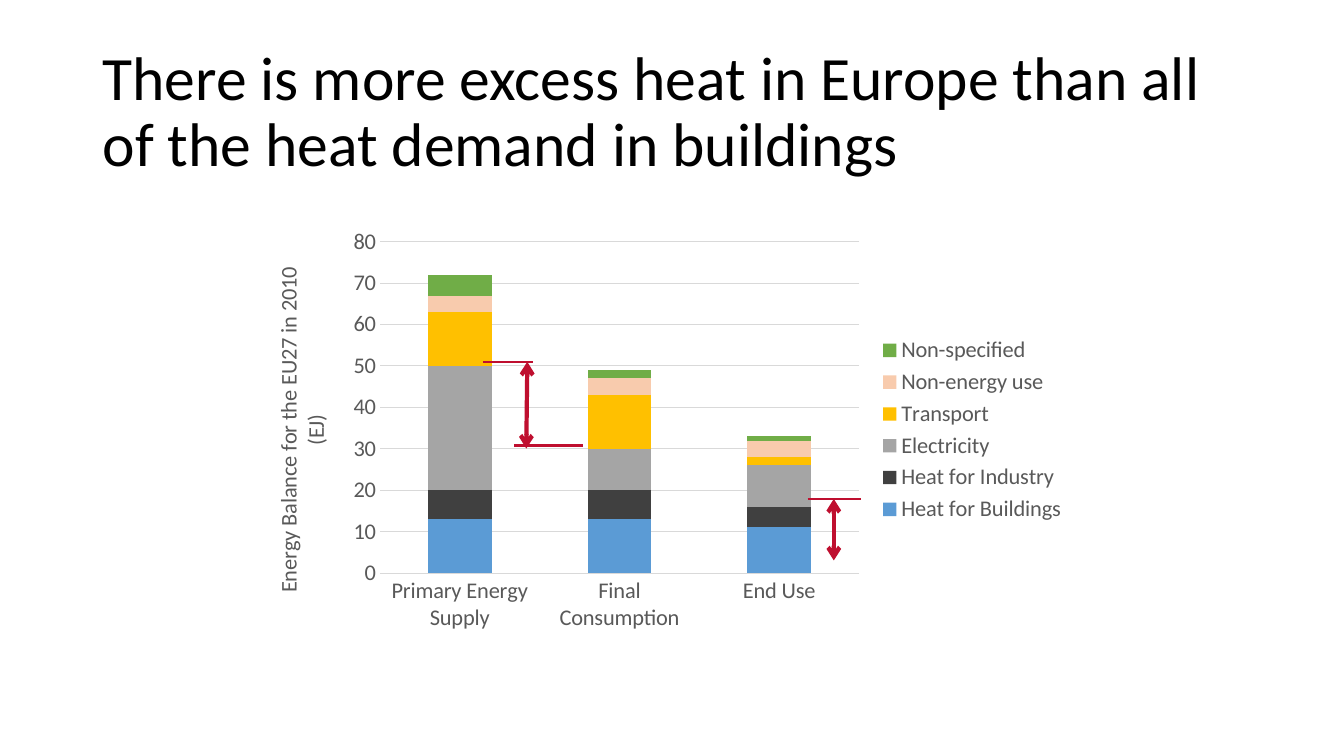
from pptx import Presentation
from pptx.chart.data import CategoryChartData as Data
from pptx.dml.color import RGBColor
from pptx.enum.chart import XL_CHART_TYPE as Kind, XL_LEGEND_POSITION as Place, XL_TICK_MARK as Tick
from pptx.enum.shapes import MSO_CONNECTOR as Link
from pptx.enum.text import MSO_ANCHOR as Anchor
from pptx.oxml.ns import qn
from pptx.util import Inches, Pt
from lxml.etree import SubElement as add_node

FONT = "Calibri"
GREY, RULE, RED = "595959", "D9D9D9", "BF0F2F"

STAGES = ["Primary Energy Supply", "Final Consumption", "End Use"]
USES = [
    ("Heat for Buildings", (13, 13, 11), "5B9BD5"),
    ("Heat for Industry", (7, 7, 5), "404040"),
    ("Electricity", (30, 10, 10), "A5A5A5"),
    ("Transport", (13, 13, 2), "FFC000"),
    ("Non-energy use", (4, 4, 4), "F8CBAD"),
    ("Non-specified", (5, 2, 1), "70AD47"),
]

# Start, end, width, arrowheads
MARKS = [
    ((5.23, 3.59), (5.22, 4.45), 3, True),
    ((4.79, 3.59), (5.29, 3.59), 1.5, False),
    ((5.1, 4.42), (5.78, 4.42), 2.25, False),
    ((8.27, 4.95), (8.27, 5.56), 3, True),
    ((8.01, 4.95), (8.54, 4.95), 1.5, False),
]


def color(code):
    return RGBColor.from_string(code)


def style(font, size=16, tint=GREY):
    font.name = FONT
    font.size = Pt(size)
    font.bold = False
    font.color.rgb = color(tint)


def stroke(line, tint, width):
    line.color.rgb = color(tint)
    line.width = Pt(width)


def add_text(slide, text, box, size=16, tint="000000", space=1.0):
    frame = slide.shapes.add_textbox(*map(Inches, box)).text_frame
    frame.word_wrap = True
    frame.vertical_anchor = Anchor.MIDDLE
    para = frame.paragraphs[0]
    para.line_spacing = space
    run = para.add_run()
    run.text = text
    style(run.font, size, tint)


def add_bars(slide, box):
    data = Data(number_format="0")
    data.categories = STAGES
    for name, vals, _ in USES:
        data.add_series(name, vals)
    chart = slide.shapes.add_chart(Kind.COLUMN_STACKED, *map(Inches, box), data).chart
    style(chart.font)
    chart.has_title = False

    # Stacked columns
    plot = chart.plots[0]
    plot.gap_width, plot.overlap = 150, 100
    plot.vary_by_categories = False
    for series, (_, _, tint) in zip(plot.series, USES):
        series.format.fill.solid()
        series.format.fill.fore_color.rgb = color(tint)

    # Axes
    cat, val = chart.category_axis, chart.value_axis
    for axis in (cat, val):
        axis.major_tick_mark = axis.minor_tick_mark = Tick.NONE
        style(axis.tick_labels.font)
    stroke(cat.format.line, RULE, 0.75)
    val.format.line.fill.background()
    stroke(val.major_gridlines.format.line, RULE, 0.75)
    val.minimum_scale, val.maximum_scale, val.major_unit = 0, 80, 10
    val.tick_labels.number_format = "0"
    val.tick_labels.number_format_is_linked = False
    title = val.axis_title.text_frame
    title.text = "Energy Balance for the EU27 in 2010 (EJ)"
    style(title.paragraphs[0].runs[0].font)

    # Legend
    chart.has_legend = True
    chart.legend.position = Place.RIGHT
    chart.legend.include_in_layout = False
    style(chart.legend.font)


def add_mark(slide, start, end, width, heads):
    mark = slide.shapes.add_connector(Link.STRAIGHT, *map(Inches, start + end))
    stroke(mark.line, RED, width)
    if heads:
        line = mark.line._get_or_add_ln()
        for tag in ("a:headEnd", "a:tailEnd"):
            add_node(line, qn(tag), type="arrow")
    add_node(mark._element.spPr, qn("a:effectLst"))


def main():
    deck = Presentation()
    deck.slide_width, deck.slide_height = Inches(13.33), Inches(7.5)
    slide = deck.slides.add_slide(deck.slide_layouts[6])

    # Heading
    add_text(slide, "There is more excess heat in Europe than all of the heat demand in buildings",
             (0.92, 0.4, 11.5, 1.45), size=44, space=0.9)

    # Energy chart with the excess heat marked
    add_bars(slide, (2.49, 2.18, 8.19, 4.17))
    for mark in MARKS:
        add_mark(slide, *mark)

    deck.save("out.pptx")


if __name__ == "__main__":
    main()
